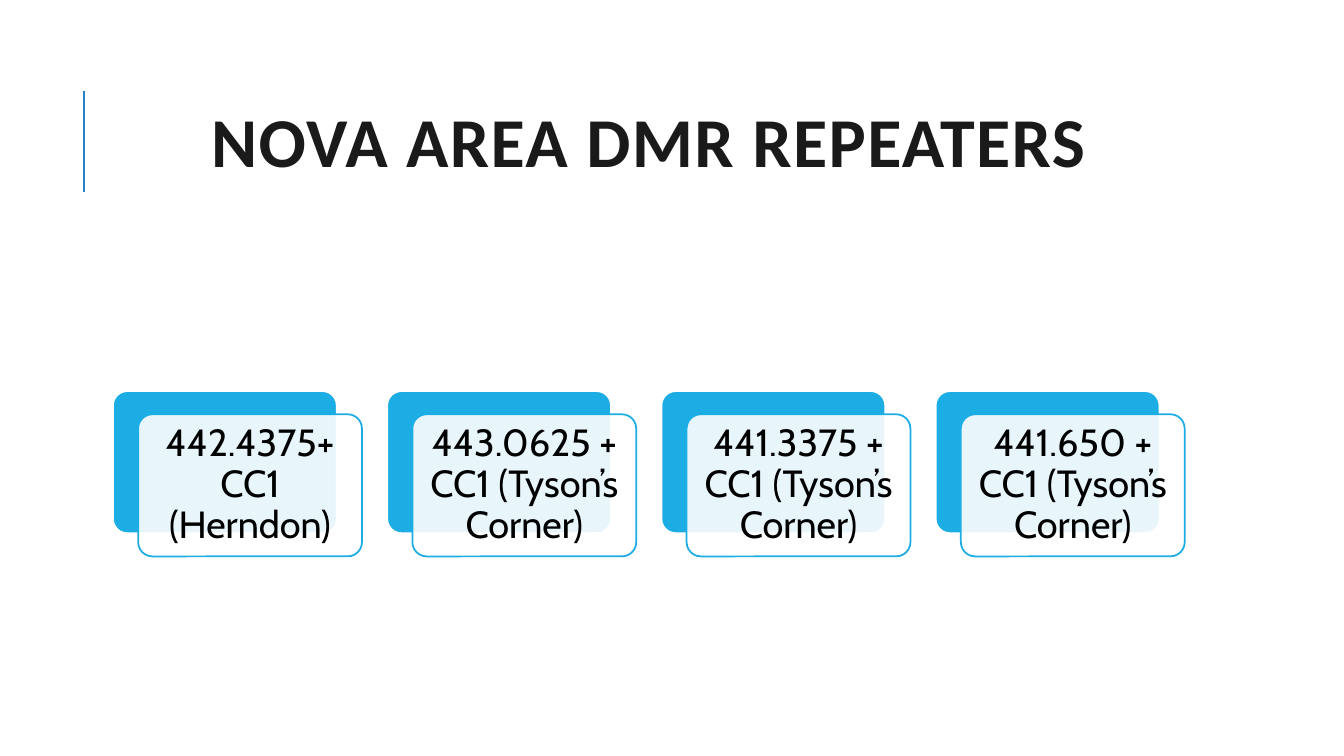
from lxml import etree
from pptx import Presentation
from pptx.dml.color import RGBColor
from pptx.enum.shapes import MSO_CONNECTOR, MSO_SHAPE
from pptx.enum.text import MSO_ANCHOR, MSO_AUTO_SIZE, PP_ALIGN
from pptx.oxml.ns import qn
from pptx.util import Inches, Pt

STRAIGHT = MSO_CONNECTOR.STRAIGHT
ROUNDED = MSO_SHAPE.ROUNDED_RECTANGLE
MIDDLE = MSO_ANCHOR.MIDDLE
NO_AUTOFIT = MSO_AUTO_SIZE.NONE
CENTER = PP_ALIGN.CENTER

COLORS = {
    "title": "1A1A1A",
    "accent_line": "2683C6",
    "card": "1CADE4",
    "white": "FFFFFF",
    "text": "000000",
}
TITLE_FONT = {"name": "Calibri", "size": Pt(50), "bold": True}
CARD_FONT = {"name": "Cabin", "size": Pt(27), "bold": False}
MARGINS = ("margin_left", "margin_top", "margin_right", "margin_bottom")

REPEATERS = [
    "442.4375+ CC1 (Herndon)",
    "443.0625 + CC1 (Tyson’s Corner)",
    "441.3375 + CC1 (Tyson’s Corner)",
    "441.650 + CC1 (Tyson’s Corner)",
]
FIRST_LEFT, CARD_TOP, CARD_PITCH = 1.12, 3.88, 2.72
CARD_WIDTH, CARD_HEIGHT = 2.22, 1.41
FRONT_SHIFT_X, FRONT_SHIFT_Y = 0.25, 0.23
TEXT_INSET = 0.04


def color(name):
    return RGBColor.from_string(COLORS[name])


def write_text(box, text, font_values, color_name, spacing):
    """Write one centred paragraph and return its run."""
    frame = box.text_frame
    frame.word_wrap = True
    frame.auto_size = NO_AUTOFIT
    frame.vertical_anchor = MIDDLE
    para = frame.paragraphs[0]
    para.alignment = CENTER
    para.line_spacing = spacing
    span = para.add_run()
    span.text = text
    for key, value in font_values.items():
        setattr(span.font, key, value)
    span.font.color.rgb = color(color_name)
    return span


def add_title(page, text):
    box = page.shapes.title
    box.left, box.top = Inches(1.12), Inches(0.64)
    box.width, box.height = Inches(10.63), Inches(1.64)
    span = write_text(box, text, TITLE_FONT, "title", 0.8)
    span._r.get_or_add_rPr().set("spc", "100")  # letter spacing of 1 pt


def add_accent_line(page):
    line = page.shapes.add_connector(
        STRAIGHT, Inches(0.83), Inches(1.9), Inches(0.83), Inches(0.9))
    line.line.color.rgb = color("accent_line")
    line.line.width = Pt(1.5)
    etree.SubElement(line._element.spPr, qn("a:effectLst"))


def add_panel(group, left, top, fill_name, line_name):
    panel = group.shapes.add_shape(
        ROUNDED, Inches(left), Inches(top), Inches(CARD_WIDTH), Inches(CARD_HEIGHT))
    panel.adjustments[0] = 0.1
    panel.shadow.inherit = False
    panel.fill.solid()
    panel.fill.fore_color.rgb = color(fill_name)
    panel.line.color.rgb = color(line_name)
    panel.line.width = Pt(1.25)
    return panel


def set_opacity(shape, percent):
    fill_color = shape._element.spPr.find(qn("a:solidFill"))[0]
    etree.SubElement(fill_color, qn("a:alpha"), val=str(percent * 1000))


def add_repeater_card(group, left, text):
    add_panel(group, left, CARD_TOP, "card", "white")
    front_left, front_top = left + FRONT_SHIFT_X, CARD_TOP + FRONT_SHIFT_Y
    front = add_panel(group, front_left, front_top, "white", "card")
    set_opacity(front, 90)
    box = group.shapes.add_textbox(
        Inches(front_left + TEXT_INSET), Inches(front_top + TEXT_INSET),
        Inches(CARD_WIDTH - 2 * TEXT_INSET), Inches(CARD_HEIGHT - 2 * TEXT_INSET))
    for margin in MARGINS:
        setattr(box.text_frame, margin, Inches(0.11))
    write_text(box, text, CARD_FONT, "text", 0.9)


def main():
    deck = Presentation()
    deck.slide_width, deck.slide_height = Inches(13.33), Inches(7.5)
    page = deck.slides.add_slide(deck.slide_layouts.get_by_name("Title Only"))

    # Heading
    add_title(page, "NOVA AREA DMR REPEATERS")
    add_accent_line(page)

    # Row of repeater cards
    group = page.shapes.add_group_shape()
    for index, text in enumerate(REPEATERS):
        add_repeater_card(group, FIRST_LEFT + index * CARD_PITCH, text)

    deck.save("out.pptx")


if __name__ == "__main__":
    main()
